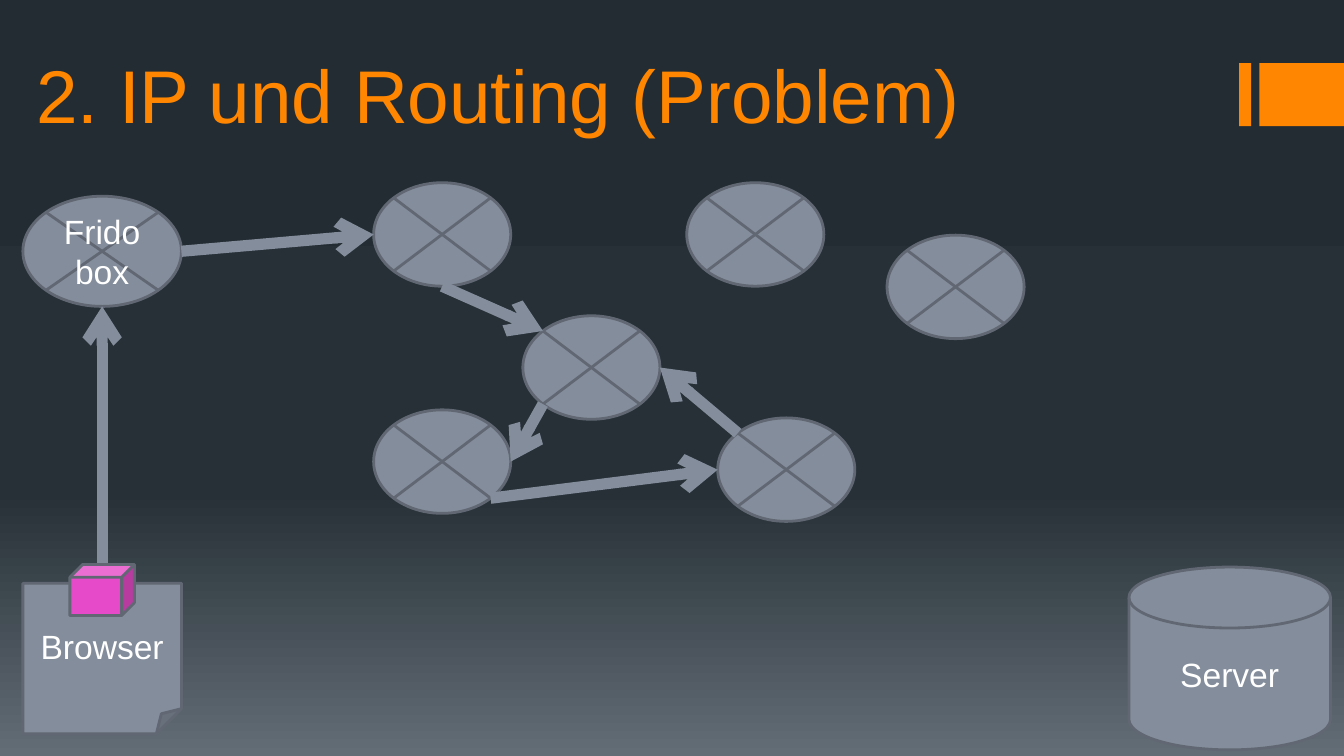
from copy import deepcopy
from math import cos, radians, sin

from pptx import Presentation
from pptx.dml.color import RGBColor
from pptx.enum.shapes import MSO_CONNECTOR, MSO_SHAPE as Preset
from pptx.enum.text import MSO_ANCHOR as Anchor, MSO_AUTO_SIZE, PP_ALIGN as Align
from pptx.oxml.ns import qn
from pptx.util import Inches, Pt
from lxml.etree import SubElement

THEME = {
    "font": "Arial", "title_size": 40, "label_size": 18,
    "outline_width": 1.5, "arrow_width": 6,
    "accent": "FF8600", "node": "838D9B", "outline": "616873",
    "packet": "E74AC9", "label": "FFFFFF",
    "background": [(0, "242C33"), (0.65, "273037"), (1, "636D76")],
}

# Content: name -> preset, box (left, top, width, height), label
TITLE = "2. IP und Routing (Problem)"
TITLE_BOX = (0.17, 0.13, 9.83, 0.95)
ACCENT_BARS = [(9.22, 0.47, 0.09, 0.47), (9.37, 0.47, 0.63, 0.47)]
ROUTER_SIZE = (1.02, 0.77)
ROUTERS = {
    "entry": (2.78, 1.36), "lower left": (2.78, 3.05), "far right": (6.6, 1.75),
    "centre": (3.89, 2.35), "upper": (5.11, 1.36), "lower right": (5.34, 3.11),
}
ROUTER = Preset.FLOWCHART_SUMMING_JUNCTION
NODES = {
    "home": (ROUTER, (0.17, 1.46, 1.18, 0.82), "Frido box"),
    "browser": (Preset.FOLDED_CORNER, (0.17, 4.34, 1.18, 1.12), "Browser"),
    **{name: (ROUTER, place + ROUTER_SIZE, "") for name, place in ROUTERS.items()},
    "server": (Preset.FLOWCHART_MAGNETIC_DISK, (8.4, 4.22, 1.5, 1.36), "Server"),
}
PACKET_BOX = (0.52, 4.2, 0.48, 0.38)

# Hops: start node, angle on its rim, end node, angle (clockwise from the right)
HOPS = [
    ("home", 0, "entry", 180),
    ("entry", 90, "centre", 225),
    ("centre", 135, "lower left", 0),
    ("lower left", 45, "lower right", 180),
    ("browser", 270, "home", 90),
    ("lower right", 225, "centre", 0),
]


def color(name):
    return RGBColor.from_string(THEME.get(name, name))


def write(shape, text, *, size, fill, align, anchor):
    frame = shape.text_frame
    frame.word_wrap = True
    frame.auto_size = MSO_AUTO_SIZE.NONE
    frame.vertical_anchor = anchor
    para = frame.paragraphs[0]
    para.alignment = align
    span = para.add_run()
    span.text = text
    span.font.name = THEME["font"]
    span.font.size = Pt(THEME[size])
    span.font.color.rgb = color(fill)


def add_box(page, preset, box, fill, outline=None):
    shape = page.shapes.add_shape(preset, *map(Inches, box))
    shape.shadow.inherit = False
    shape.fill.solid()
    shape.fill.fore_color.rgb = color(fill)
    if outline:
        shape.line.color.rgb = color(outline)
        shape.line.width = Pt(THEME["outline_width"])
    else:
        shape.line.fill.background()
    return shape


def rim_point(name, angle):
    left, top, width, height = NODES[name][1]
    turn = radians(angle)
    return (Inches(left + width / 2 * (1 + cos(turn))),
            Inches(top + height / 2 * (1 + sin(turn))))


def add_arrow(page, start, end):
    arrow = page.shapes.add_connector(MSO_CONNECTOR.STRAIGHT, *start, *end)
    arrow.line.color.rgb = color("node")
    arrow.line.width = Pt(THEME["arrow_width"])
    properties = arrow._element.spPr
    SubElement(properties.find(qn("a:ln")), qn("a:tailEnd"), type="arrow")
    SubElement(properties, qn("a:effectLst"))


def paint_background(page):
    fill = page.background.fill
    fill.gradient()
    fill.gradient_angle = 270
    first = page.element.find(".//" + qn("a:gs"))
    first.addnext(deepcopy(first))
    for stop, (position, tint) in zip(fill.gradient_stops, THEME["background"]):
        stop.position = position
        stop.color.rgb = color(tint)


def main():
    # Widescreen page, 16:9
    deck = Presentation()
    deck.slide_width = Inches(10)
    deck.slide_height = deck.slide_width * 9 // 16
    page = deck.slides.add_slide(deck.slide_layouts[5])
    paint_background(page)

    # Title and accent bars
    title = page.shapes.title
    title.left, title.top, title.width, title.height = map(Inches, TITLE_BOX)
    write(title, TITLE, size="title_size", fill="accent",
          align=Align.LEFT, anchor=Anchor.BOTTOM)
    for box in ACCENT_BARS:
        add_box(page, Preset.RECTANGLE, box, "accent")

    # Network nodes
    for preset, box, label in NODES.values():
        node = add_box(page, preset, box, "node", "outline")
        if label:
            write(node, label, size="label_size", fill="label",
                  align=Align.CENTER, anchor=Anchor.MIDDLE)

    # Route of the packet
    for start, start_angle, end, end_angle in HOPS:
        add_arrow(page, rim_point(start, start_angle), rim_point(end, end_angle))
    add_box(page, Preset.CUBE, PACKET_BOX, "packet", "outline")

    deck.save("out.pptx")


if __name__ == "__main__":
    main()
